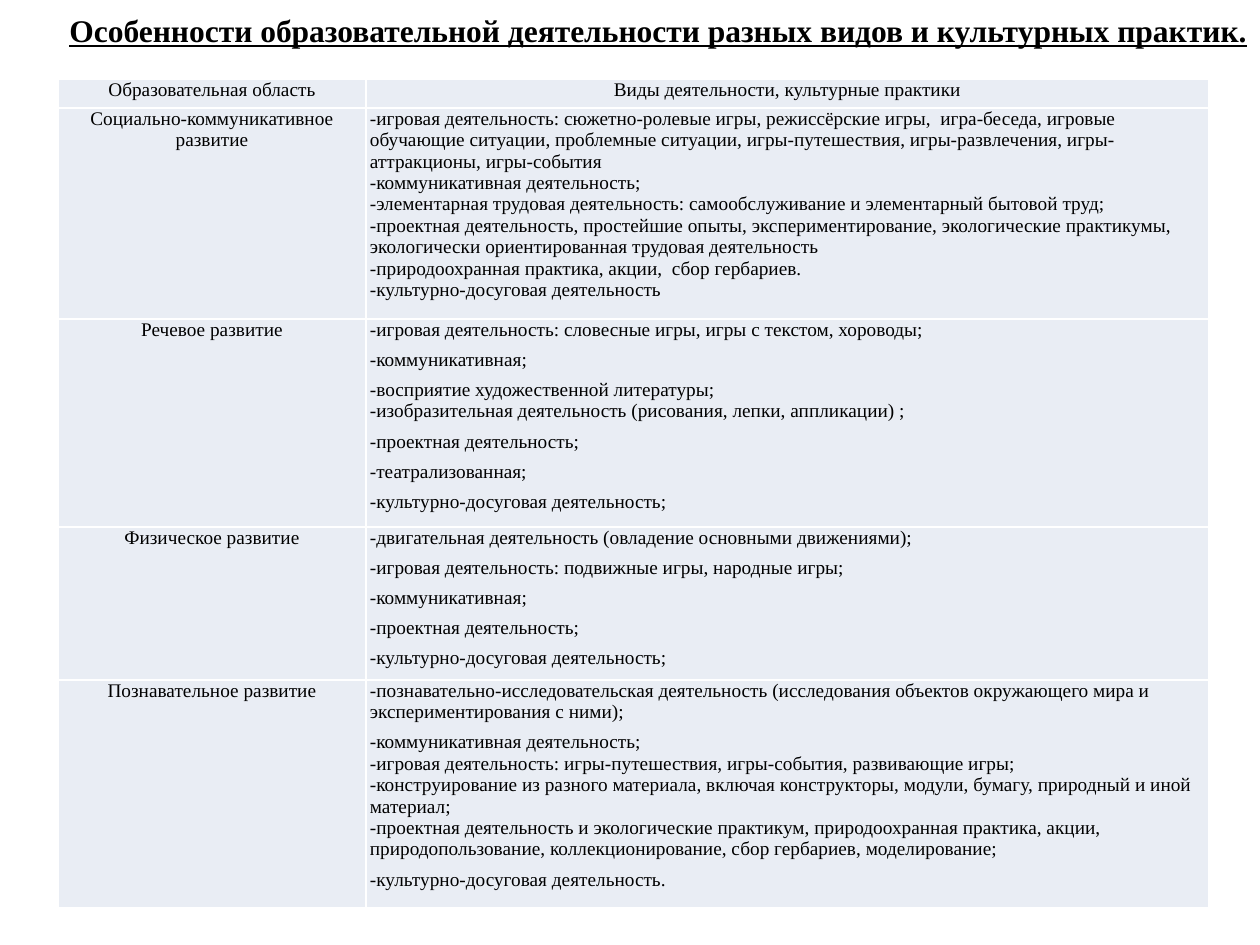
"""Build a slide with a table of educational areas and their activities."""
from dataclasses import dataclass

import pptx
import pptx.dml.color
import pptx.enum.text
import pptx.oxml
import pptx.oxml.ns
import pptx.util

PX = 914400 / 126
BLACK = pptx.dml.color.RGBColor(0x00, 0x00, 0x00)
WHITE = pptx.dml.color.RGBColor(0xFF, 0xFF, 0xFF)
PALE = pptx.dml.color.RGBColor(0xE9, 0xED, 0xF4)
FONT = "Times New Roman"
LEFT = pptx.enum.text.PP_ALIGN.LEFT
CENTER = pptx.enum.text.PP_ALIGN.CENTER
TITLE = "Особенности образовательной деятельности разных видов и культурных практик."
TITLE_FONT = {"name": FONT, "size": pptx.util.Pt(18), "bold": True, "underline": True}
CELL_FONT = {"name": FONT, "size": pptx.util.Pt(11)}
COLUMNS = (308, 843)


@dataclass(frozen=True)
class Line:
    text: str
    before: int = 0
    align: pptx.enum.text.PP_ALIGN = LEFT


@dataclass(frozen=True)
class Area:
    name: str
    height: int
    lines: tuple[Line, ...]


AREAS = (
    Area("Образовательная область", 29, (
        Line("Виды деятельности, культурные практики", align=CENTER),
    )),
    Area("Социально-коммуникативное развитие", 211, (
        Line("-игровая деятельность: сюжетно-ролевые игры, режиссёрские игры,  игра-беседа, "
             "игровые обучающие ситуации, проблемные ситуации, игры-путешествия, "
             "игры-развлечения, игры-аттракционы, игры-события"),
        Line("-коммуникативная деятельность;"),
        Line("-элементарная трудовая деятельность: самообслуживание и элементарный бытовой труд;"),
        Line("-проектная деятельность, простейшие опыты, экспериментирование, экологические "
             "практикумы, экологически ориентированная трудовая деятельность"),
        Line("-природоохранная практика, акции,  сбор гербариев."),
        Line("-культурно-досуговая деятельность"),
    )),
    Area("Речевое развитие", 208, (
        Line("-игровая деятельность: словесные игры, игры с текстом, хороводы;", 5),
        Line("-коммуникативная;", 5),
        Line("-восприятие художественной литературы;", 5),
        Line("-изобразительная деятельность (рисования, лепки, аппликации) ;"),
        Line("-проектная деятельность;", 5),
        Line("-театрализованная;", 5),
        Line("-культурно-досуговая деятельность;", 5),
    )),
    Area("Физическое развитие", 153, (
        Line("-двигательная деятельность (овладение основными движениями);", 5),
        Line("-игровая деятельность: подвижные игры, народные игры;", 5),
        Line("-коммуникативная;", 5),
        Line("-проектная деятельность;", 5),
        Line("-культурно-досуговая деятельность;", 5),
    )),
    Area("Познавательное развитие", 228, (
        Line("-познавательно-исследовательская деятельность (исследования объектов "
             "окружающего мира и экспериментирования с ними);", 5),
        Line("-коммуникативная деятельность;", 5),
        Line("-игровая деятельность: игры-путешествия, игры-события, развивающие игры;"),
        Line("-конструирование из разного материала, включая конструкторы, модули, бумагу, "
             "природный и иной материал;"),
        Line("-проектная деятельность и экологические практикум, природоохранная практика, "
             "акции, природопользование, коллекционирование, сбор гербариев, моделирование;"),
        Line("-культурно-досуговая деятельность.", 5),
    )),
)


def px(n: int) -> pptx.util.Emu:
    return pptx.util.Emu(round(n * PX))


def apply(target: object, values: dict) -> None:
    for key, value in values.items():
        setattr(target, key, value)


def add_run(p, text: str, font: dict) -> None:
    r = p.add_run()
    r.text = text
    apply(r.font, font)
    r.font.color.rgb = BLACK


def add_borders(cell) -> None:
    tc_pr = cell._tc.get_or_add_tcPr()
    for i, side in enumerate("LRTB"):
        tc_pr.insert(i, pptx.oxml.parse_xml(
            f'<a:ln{side} {pptx.oxml.ns.nsdecls("a")} w="12700"><a:solidFill>'
            f'<a:srgbClr val="{WHITE}"/></a:solidFill></a:ln{side}>'))


def fill_cell(cell, lines: tuple[Line, ...]) -> None:
    apply(cell, {"margin_left": px(4), "margin_right": px(4),
                 "margin_top": 0, "margin_bottom": 0})
    cell.fill.solid()
    cell.fill.fore_color.rgb = PALE
    add_borders(cell)
    tf = cell.text_frame
    for i, line in enumerate(lines):
        p = tf.add_paragraph() if i else tf.paragraphs[0]
        apply(p, {"alignment": line.align, "space_before": pptx.util.Pt(line.before)})
        add_run(p, line.text, CELL_FONT)


def add_areas(s, areas: tuple[Area, ...]) -> None:
    height = sum(area.height for area in areas)
    table = s.shapes.add_table(len(areas), len(COLUMNS), px(58), px(79),
                               px(sum(COLUMNS)), px(height)).table
    apply(table, {"first_row": False, "horz_banding": False})
    for column, width in zip(table.columns, COLUMNS):
        column.width = px(width)
    for row, area in zip(table.rows, areas):
        row.height = px(area.height)
        fill_cell(row.cells[0], (Line(area.name, align=CENTER),))
        fill_cell(row.cells[1], area.lines)


def add_title(s) -> None:
    sp = s.shapes.add_textbox(px(-5), px(2), px(1279), px(90))
    tf = sp.text_frame
    apply(tf, {"word_wrap": True, "margin_top": px(9),
               "vertical_anchor": pptx.enum.text.MSO_ANCHOR.TOP})
    p = tf.paragraphs[0]
    p._p.get_or_add_pPr().set("indent", str(px(62)))
    add_run(p, TITLE, TITLE_FONT)


def main() -> None:
    prs = pptx.Presentation()
    apply(prs, {"slide_width": px(1260), "slide_height": px(945)})
    s = prs.slides.add_slide(prs.slide_layouts[6])
    add_areas(s, AREAS)
    add_title(s)
    prs.save("out.pptx")


if __name__ == "__main__":
    main()
